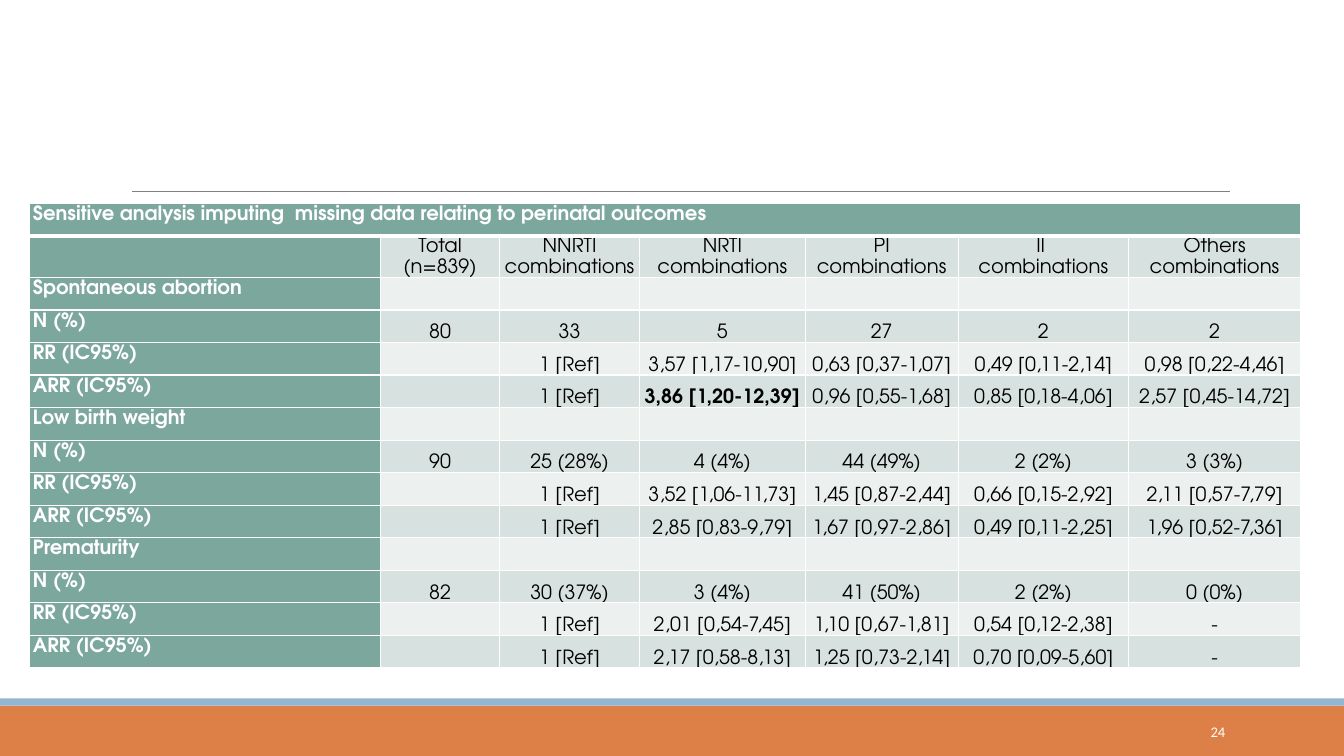
from dataclasses import dataclass
from typing import NamedTuple

from lxml.etree import SubElement
from pptx import Presentation
from pptx.dml.color import RGBColor as Rgb
from pptx.enum.shapes import MSO_CONNECTOR as Link, MSO_SHAPE as Form
from pptx.enum.text import MSO_ANCHOR as Anchor, PP_ALIGN as Align
from pptx.oxml.ns import qn
from pptx.util import Cm, Pt


@dataclass(frozen=True)
class Theme:
    white: str = "FFFFFF"
    black: str = "000000"
    grey: str = "808080"
    green: str = "7BA79D"
    dark: str = "D7E1DF"
    light: str = "ECF1EF"
    orange: str = "DD8047"
    blue: str = "94B6D2"
    face: str = "TeX Gyre Adventor"
    plain: str = "Calibri"
    body: float = 14
    small: float = 10.5


class Band(NamedTuple):
    top: float
    high: float
    color: str


class Group(NamedTuple):
    name: str
    count: list[str]
    crude: list[str]
    tuned: list[str]


LOOK = Theme()
WIDE, HIGH = 33.87, 19.05
BANDS = [Band(17.78, 1.27, LOOK.orange), Band(17.6, 0.18, LOOK.blue)]
COLS = [8.86, 3, 3.53, 4.17, 3.86, 4.29, 4.34]
ROW = 0.82
TITLE = "Sensitive analysis imputing  missing data relating to perinatal outcomes"
HEADS = ["", "Total (n=839)", "NNRTI combinations", "NRTI combinations",
         "PI combinations", "II \ncombinations", "Others combinations"]
STRONG = "3,86 [1,20-12,39]"
GROUPS = [
    Group("Spontaneous abortion",
          ["80", "33", "5", "27", "2", "2"],
          ["", "1 [Ref]", "3,57 [1,17-10,90]", "0,63 [0,37-1,07]",
           "0,49 [0,11-2,14]", "0,98 [0,22-4,46]"],
          ["", "1 [Ref]", STRONG, "0,96 [0,55-1,68]",
           "0,85 [0,18-4,06]", "2,57 [0,45-14,72]"]),
    Group("Low birth weight",
          ["90", "25 (28%)", "4 (4%)", "44 (49%)", "2 (2%)", "3 (3%)"],
          ["", "1 [Ref]", "3,52 [1,06-11,73]", "1,45 [0,87-2,44]",
           "0,66 [0,15-2,92]", "2,11 [0,57-7,79]"],
          ["", "1 [Ref]", "2,85 [0,83-9,79]", "1,67 [0,97-2,86]",
           "0,49 [0,11-2,25]", "1,96 [0,52-7,36]"]),
    Group("Prematurity",
          ["82", "30 (37%)", "3 (4%)", "41 (50%)", "2 (2%)", "0 (0%)"],
          ["", "1 [Ref]", "2,01 [0,54-7,45]", "1,10 [0,67-1,81]",
           "0,54 [0,12-2,38]", "-"],
          ["", "1 [Ref]", "2,17 [0,58-8,13]", "1,25 [0,73-2,14]",
           "0,70 [0,09-5,60]", "-"]),
]


def list_rows() -> list[list[str]]:
    blank = [""] * (len(COLS) - 1)
    rows = [[TITLE, *blank], HEADS]
    for group in GROUPS:
        rows += [[group.name, *blank], ["N (%)", *group.count],
                 ["RR (IC95%)", *group.crude], ["ARR (IC95%)", *group.tuned]]
    return rows


def add_text(para, text: str, face: str, size: float, color: str,
             bold: bool = False) -> None:
    run = para.add_run()
    run.text = text
    font = run.font
    font.name, font.size, font.bold = face, Pt(size), bold
    font.color.rgb = Rgb.from_string(color)


def draw_band(slide, band: Band) -> None:
    shape = slide.shapes.add_shape(
        Form.RECTANGLE, 0, Cm(band.top), Cm(WIDE), Cm(band.high))
    shape.shadow.inherit = False
    shape.fill.solid()
    shape.fill.fore_color.rgb = Rgb.from_string(band.color)
    shape.line.fill.background()


def draw_rule(slide) -> None:
    rule = slide.shapes.add_connector(
        Link.STRAIGHT, Cm(3.33), Cm(4.82), Cm(31), Cm(4.82))
    rule.line.color.rgb = Rgb.from_string(LOOK.grey)
    rule.line.width = Pt(0.5)
    SubElement(rule._element.spPr, qn("a:effectLst"))


def set_edges(cell, row: int) -> None:
    props = cell._tc.get_or_add_tcPr()
    thick = {0: "lnB", 1: "lnT"}.get(row)
    for side in ("lnL", "lnR", "lnT", "lnB"):
        width = Pt(3 if side == thick else 1)
        line = SubElement(props, qn(f"a:{side}"), w=str(width))
        fill = SubElement(line, qn("a:solidFill"))
        SubElement(fill, qn("a:srgbClr"), val=LOOK.white)


def fill_cell(cell, text: str, row: int, col: int) -> None:
    label = row == 0 or col == 0
    set_edges(cell, row)
    cell.fill.solid()
    tint = LOOK.green if label else LOOK.dark if row % 2 else LOOK.light
    cell.fill.fore_color.rgb = Rgb.from_string(tint)
    cell.margin_left = cell.margin_right = Cm(0.1)
    cell.margin_top = cell.margin_bottom = 0
    if not label:
        cell.vertical_anchor = Anchor.MIDDLE if row == 1 else Anchor.BOTTOM
    frame = cell.text_frame
    for index, part in enumerate(text.split("\n")):
        para = frame.add_paragraph() if index else frame.paragraphs[0]
        para.line_spacing = 1.15
        para.alignment = Align.LEFT if label else Align.CENTER
        if part:
            add_text(para, part, LOOK.face, LOOK.body,
                     LOOK.white if label else LOOK.black,
                     label or part == STRONG)
        else:
            SubElement(para._p, qn("a:endParaRPr"), sz=str(int(LOOK.body * 100)))


def draw_table(slide) -> None:
    rows = list_rows()
    table = slide.shapes.add_table(
        len(rows), len(COLS), Cm(0.73), Cm(5.12),
        Cm(sum(COLS)), Cm(ROW * len(rows))).table
    for col, width in enumerate(COLS):
        table.columns[col].width = Cm(width)
    for row, texts in enumerate(rows):
        table.rows[row].height = Cm(ROW)
        for col, text in enumerate(texts):
            fill_cell(table.cell(row, col), text, row, col)
    table.cell(0, 0).merge(table.cell(0, len(COLS) - 1))


def draw_number(slide) -> None:
    box = slide.shapes.add_textbox(Cm(27.5), Cm(17.93), Cm(3.63), Cm(1.02))
    frame = box.text_frame
    frame.word_wrap = True
    frame.vertical_anchor = Anchor.MIDDLE
    para = frame.paragraphs[0]
    para.alignment = Align.RIGHT
    add_text(para, "24", LOOK.plain, LOOK.small, LOOK.white)


def main() -> None:
    deck = Presentation()
    deck.slide_width, deck.slide_height = Cm(WIDE), Cm(HIGH)
    slide = deck.slides.add_slide(deck.slide_layouts[6])
    for band in BANDS:
        draw_band(slide, band)
    draw_rule(slide)
    draw_table(slide)
    draw_number(slide)
    deck.save("out.pptx")


if __name__ == "__main__":
    main()
